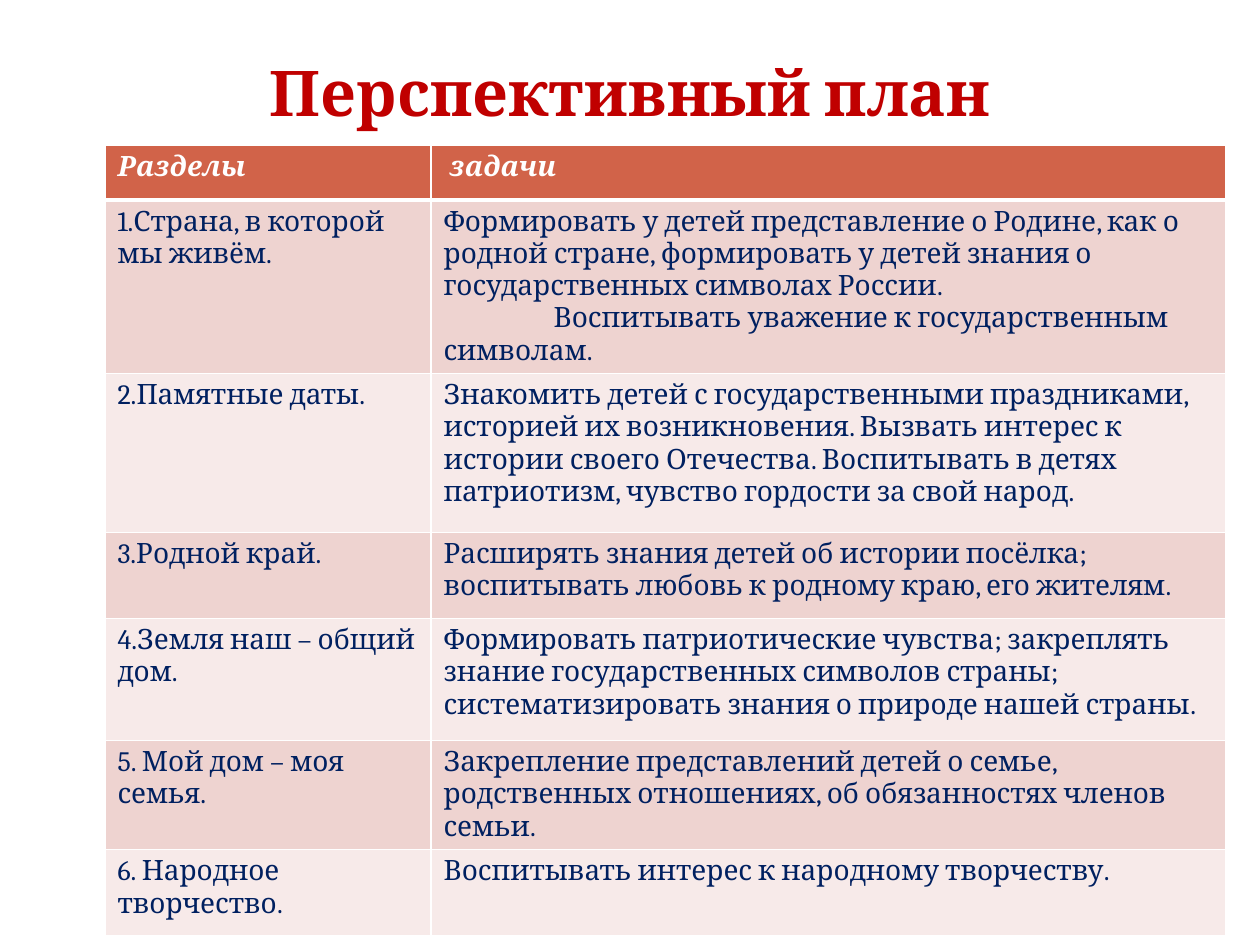
from dataclasses import dataclass

from lxml import etree
from pptx import Presentation
from pptx import util as u
from pptx.dml.color import RGBColor
from pptx.enum import text
from pptx.oxml import ns

PX = 914400 // 126


@dataclass(frozen=True)
class Theme:
    font: str = "Cambria"
    title: str = "C00000"
    body: str = "002060"
    white: str = "FFFFFF"
    header: str = "D16349"
    bands: tuple = ("EED3D0", "F7EAE9")
    title_size: int = 36
    body_size: int = 16
    thin: int = 1
    thick: int = 3


THEME = Theme()
TITLE = "Перспективный план"
COLUMNS = (326, 795)
HEIGHTS = (55, 159, 159, 86, 122, 86, 86)
INDENT = 110
ROWS = [
    (["Разделы"], [" задачи"]),
    (["1.Страна, в которой мы живём."],
     ["Формировать у детей представление о Родине, как о родной стране, "
      "формировать у детей знания о государственных символах России.",
      "Воспитывать уважение к государственным символам."]),
    (["2.Памятные даты."],
     ["Знакомить детей с государственными праздниками, историей их "
      "возникновения. Вызвать интерес к истории своего Отечества. "
      "Воспитывать в детях патриотизм, чувство гордости за свой народ."]),
    (["3.Родной край."],
     ["Расширять знания детей об истории посёлка; воспитывать любовь "
      "к родному краю, его жителям."]),
    (["4.Земля наш – общий дом."],
     ["Формировать патриотические чувства; закреплять знание "
      "государственных символов страны; систематизировать знания "
      "о природе нашей страны."]),
    (["5. Мой дом – моя семья."],
     ["Закрепление представлений детей о семье, родственных отношениях, "
      "об обязанностях членов семьи."]),
    (["6. Народное творчество."],
     ["Воспитывать интерес к народному творчеству."]),
]


def px(n):
    return u.Emu(n * PX)


def add_run(p, words, size, color, bold=False, italic=False):
    r = p.add_run()
    r.text = words
    f = r.font
    f.name, f.size, f.bold, f.italic = THEME.font, u.Pt(size), bold, italic
    f.color.rgb = RGBColor.from_string(color)


def set_borders(cell, top, bottom):
    tcPr = cell._tc.get_or_add_tcPr()
    widths = {"lnL": THEME.thin, "lnR": THEME.thin, "lnT": top, "lnB": bottom}
    for i, (tag, width) in enumerate(widths.items()):
        ln = etree.Element(ns.qn(f"a:{tag}"), w=str(u.Pt(width)))
        fill = etree.SubElement(ln, ns.qn("a:solidFill"))
        etree.SubElement(fill, ns.qn("a:srgbClr"), val=THEME.white)
        tcPr.insert(i, ln)


def fill_cell(cell, paragraphs, row):
    header = row == 0
    cell.fill.solid()
    cell.fill.fore_color.rgb = RGBColor.from_string(
        THEME.header if header else THEME.bands[(row - 1) % 2])
    set_borders(cell, THEME.thick if row == 1 else THEME.thin,
                THEME.thick if header else THEME.thin)
    tf = cell.text_frame
    for i, words in enumerate(paragraphs):
        p = tf.add_paragraph() if i else tf.paragraphs[0]
        if i:
            p._p.get_or_add_pPr().set("indent", str(px(INDENT)))
        add_run(p, words, THEME.body_size,
                THEME.white if header else THEME.body, header, header)


def place_title(slide, x, y, w, h):
    sp = slide.shapes.title
    sp.left, sp.top, sp.width, sp.height = map(px, (x, y, w, h))
    tf = sp.text_frame
    tf.word_wrap = True
    tf.vertical_anchor = text.MSO_ANCHOR.MIDDLE
    p = tf.paragraphs[0]
    p.alignment = text.PP_ALIGN.CENTER
    add_run(p, TITLE, THEME.title_size, THEME.title, bold=True)


def place_plan(slide, x, y):
    table = slide.shapes.add_table(
        len(ROWS), len(COLUMNS), px(x), px(y),
        px(sum(COLUMNS)), px(sum(HEIGHTS))).table
    table.horz_banding = False
    for column, width in zip(table.columns, COLUMNS):
        column.width = px(width)
    for i, (row, height, cells) in enumerate(zip(table.rows, HEIGHTS, ROWS)):
        row.height = px(height)
        for cell, paragraphs in zip(row.cells, cells):
            fill_cell(cell, paragraphs, i)


def main():
    prs = Presentation()
    prs.slide_width, prs.slide_height = px(1260), px(945)
    slide = prs.slides.add_slide(prs.slide_layouts[5])
    place_title(slide, 63, 38, 1134, 107)
    place_plan(slide, 105, 145)
    prs.save("out.pptx")


if __name__ == "__main__":
    main()
